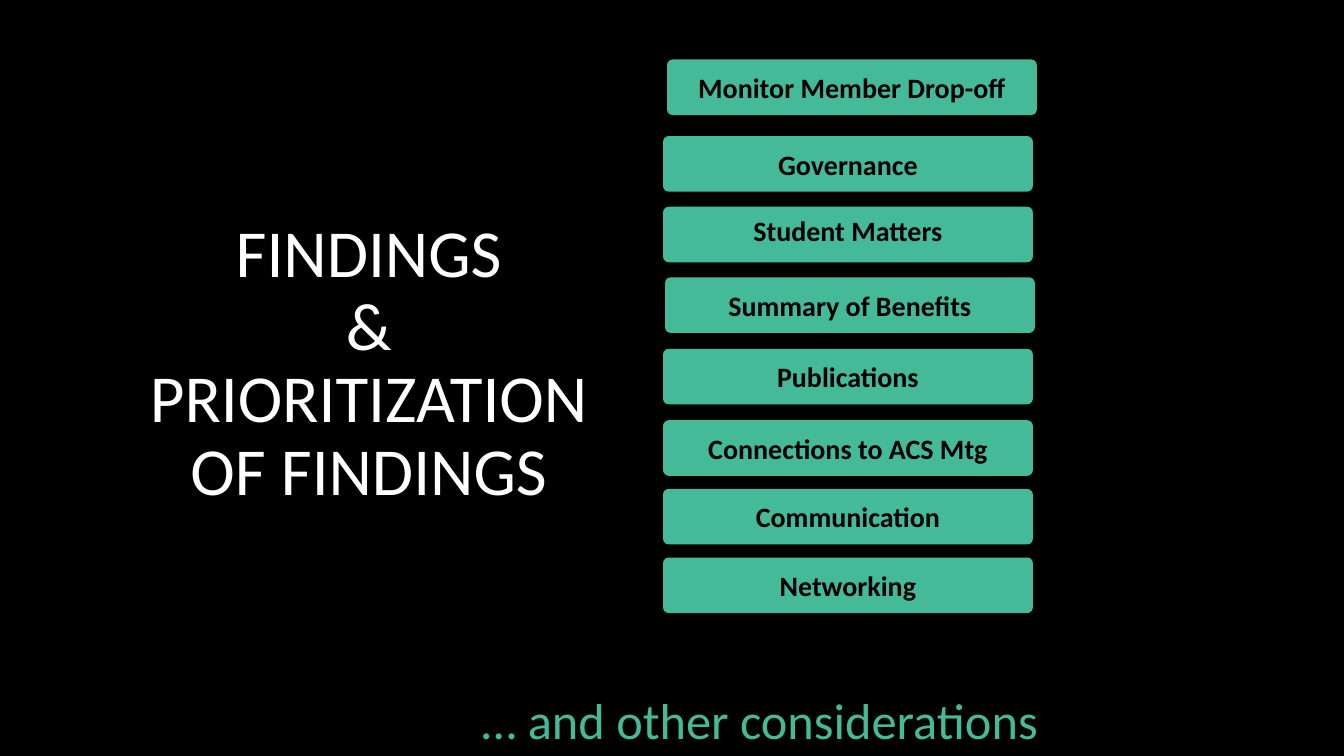
from dataclasses import dataclass

import pptx
import pptx.dml.color
import pptx.enum.shapes
import pptx.enum.text
import pptx.util
from pptx.util import Cm

BLACK = "000000"
WHITE = "FFFFFF"
GREEN = "44BA98"
FONT = "Calibri"
BUTTON_LEFT = 16.71
BUTTON_WIDTH = 9.32
BUTTON_HEIGHT = 1.4
MIDDLE = pptx.enum.text.MSO_ANCHOR.MIDDLE
TOP = pptx.enum.text.MSO_ANCHOR.TOP


@dataclass
class Finding:
    label: str
    top: float
    left: float = BUTTON_LEFT
    anchor: pptx.enum.text.MSO_ANCHOR = MIDDLE


FINDINGS = [
    Finding("Monitor Member Drop-off", 1.5, left=16.81),
    Finding("Governance", 3.43),
    Finding("Student Matters", 5.21, anchor=TOP),
    Finding("Summary of Benefits", 6.99, left=16.76),
    Finding("Publications", 8.79),
    Finding("Connections to ACS Mtg", 10.59),
    Finding("Communication", 12.32),
    Finding("Networking", 14.05),
]


def color(value: str) -> pptx.dml.color.RGBColor:
    return pptx.dml.color.RGBColor.from_string(value)


def write_text(shape, lines: list[str], size: int, text_color: str,
               anchor=MIDDLE, bold: bool = False, wrap: bool = True,
               line_spacing: float = 1.0) -> None:
    frame = shape.text_frame
    frame.word_wrap = wrap
    frame.vertical_anchor = anchor
    paragraph = frame.paragraphs[0]
    paragraph.alignment = pptx.enum.text.PP_ALIGN.CENTER
    paragraph.line_spacing = line_spacing
    for index, line in enumerate(lines):
        if index:
            paragraph.add_line_break()
        run = paragraph.add_run()
        run.text = line
        run.font.name = FONT
        run.font.size = pptx.util.Pt(size)
        run.font.bold = bold
        run.font.color.rgb = color(text_color)


def add_finding(slide, finding: Finding) -> None:
    shape = slide.shapes.add_shape(
        pptx.enum.shapes.MSO_SHAPE.ROUNDED_RECTANGLE,
        Cm(finding.left), Cm(finding.top), Cm(BUTTON_WIDTH), Cm(BUTTON_HEIGHT))
    shape.adjustments[0] = 0.1
    shape.shadow.inherit = False
    shape.fill.solid()
    shape.fill.fore_color.rgb = color(GREEN)
    shape.line.fill.background()
    write_text(shape, [finding.label], 20, BLACK, finding.anchor, bold=True)


def main() -> None:
    presentation = pptx.Presentation()
    presentation.slide_width = Cm(33.87)
    presentation.slide_height = Cm(19.05)
    slide = presentation.slides.add_slide(presentation.slide_layouts[6])
    slide.background.fill.solid()
    slide.background.fill.fore_color.rgb = color(BLACK)

    title = slide.shapes.add_textbox(Cm(2.54), Cm(3.73), Cm(13.51), Cm(10.92))
    write_text(title, ["FINDINGS", "&", "PRIORITIZATION OF FINDINGS"], 48, WHITE,
               line_spacing=0.9)

    for finding in FINDINGS:
        add_finding(slide, finding)

    closing = slide.shapes.add_textbox(Cm(11.86), Cm(17.25), Cm(14.58), Cm(1.8))
    write_text(closing, ["… and other considerations"], 36, GREEN, TOP, wrap=False)

    presentation.save("out.pptx")


if __name__ == "__main__":
    main()
